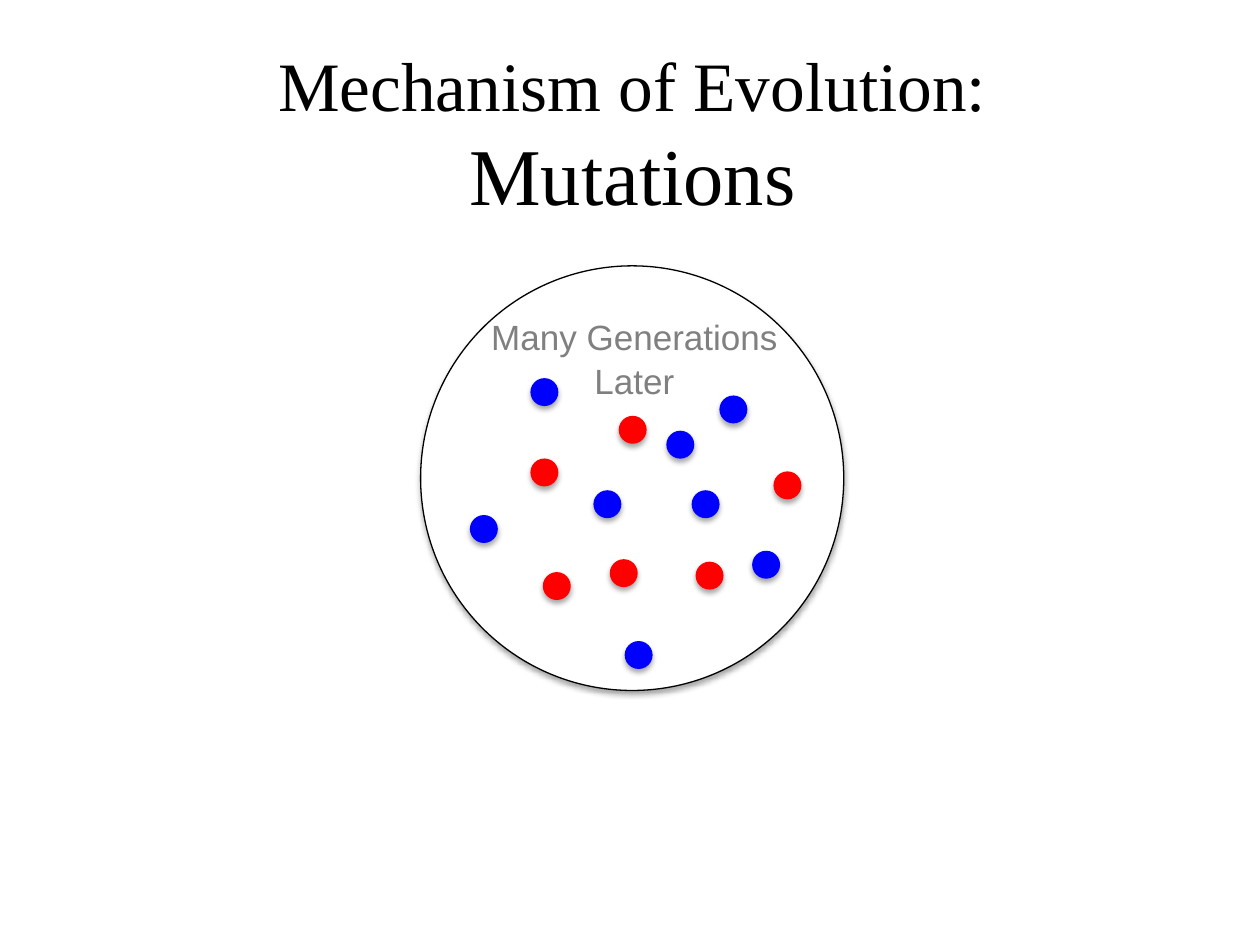
"""Build a slide showing red and blue individuals in a population after many generations."""
import dataclasses

import lxml.etree
import pptx
import pptx.dml.color
import pptx.enum.shapes
import pptx.enum.text
import pptx.oxml.ns
import pptx.util

Cm = pptx.util.Cm
Pt = pptx.util.Pt
COLOURS = {"black": "000000", "white": "FFFFFF", "red": "FF0000", "blue": "0000FF", "grey": "808080"}
DOT_SIZE = 0.51


@dataclasses.dataclass(frozen=True)
class Circle:
    left: float
    top: float
    fill: str
    line: str
    width: float = DOT_SIZE
    height: float = DOT_SIZE
    line_width: float = 1.5
    shadow_distance: float = 2


@dataclasses.dataclass(frozen=True)
class Individual:
    left: float
    top: float
    colour: str


POPULATION = Circle(8.48, 5.36, "white", "black", 8.53, 8.56, 0.75, 1.8)
INDIVIDUALS = [
    Individual(12.5, 8.41, "red"),
    Individual(13.46, 8.71, "blue"),
    Individual(13.97, 9.91, "blue"),
    Individual(10.72, 7.65, "blue"),
    Individual(10.72, 9.27, "red"),
    Individual(11.99, 9.91, "blue"),
    Individual(12.32, 11.3, "red"),
    Individual(14.53, 8, "blue"),
    Individual(14.05, 11.35, "red"),
    Individual(15.19, 11.13, "blue"),
    Individual(15.62, 9.53, "red"),
    Individual(12.62, 12.95, "blue"),
    Individual(10.97, 11.56, "red"),
    Individual(9.5, 10.41, "blue"),
]


def rgb(name: str) -> pptx.dml.color.RGBColor:
    return pptx.dml.color.RGBColor.from_string(COLOURS[name])


def format_run(run, font_name: str, size: float, colour: str) -> None:
    run.font.name = font_name
    run.font.size = Pt(size)
    run.font.color.rgb = rgb(colour)


def add_shadow(shape, distance: float) -> None:
    qn = pptx.oxml.ns.qn
    shape.shadow.inherit = False
    effects = shape.element.spPr.find(qn("a:effectLst"))
    shadow = lxml.etree.SubElement(
        effects, qn("a:outerShdw"), blurRad=str(Pt(3)), dist=str(Pt(distance)),
        dir="5400000", rotWithShape="0")
    colour = lxml.etree.SubElement(shadow, qn("a:srgbClr"), val=COLOURS["black"])
    lxml.etree.SubElement(colour, qn("a:alpha"), val="35000")


def add_circle(slide, circle: Circle) -> None:
    shape = slide.shapes.add_shape(
        pptx.enum.shapes.MSO_SHAPE.OVAL,
        Cm(circle.left), Cm(circle.top), Cm(circle.width), Cm(circle.height))
    shape.fill.solid()
    shape.fill.fore_color.rgb = rgb(circle.fill)
    shape.line.color.rgb = rgb(circle.line)
    shape.line.width = Pt(circle.line_width)
    add_shadow(shape, circle.shadow_distance)


def add_title(slide) -> None:
    title = slide.shapes.title
    title.left, title.top, title.width, title.height = Cm(2.44), Cm(1.07), Cm(20.62), Cm(3.18)
    text_frame = title.text_frame
    text_frame.text = "Mechanism of Evolution: "
    text_frame.word_wrap = True
    text_frame.auto_size = pptx.enum.text.MSO_AUTO_SIZE.NONE
    text_frame.vertical_anchor = pptx.enum.text.MSO_ANCHOR.MIDDLE
    paragraph = text_frame.paragraphs[0]
    paragraph.alignment = pptx.enum.text.PP_ALIGN.CENTER
    paragraph.add_run().text = "Mutations"
    for run, size in zip(paragraph.runs, (39.6, 46)):
        format_run(run, "Times New Roman", size, "black")


def add_label(slide) -> None:
    label = slide.shapes.add_textbox(Cm(9.4), Cm(6.07), Cm(6.78), Cm(1.27))
    text_frame = label.text_frame
    text_frame.text = "Many Generations Later"
    text_frame.word_wrap = True
    text_frame.margin_left = text_frame.margin_right = Cm(0.25)
    text_frame.margin_top = text_frame.margin_bottom = Cm(0.25)
    paragraph = text_frame.paragraphs[0]
    paragraph.alignment = pptx.enum.text.PP_ALIGN.CENTER
    paragraph.line_spacing = 1.05
    format_run(paragraph.runs[0], "Arial", 20, "grey")


def main() -> None:
    presentation = pptx.Presentation()
    presentation.slide_width = Cm(25.4)
    presentation.slide_height = Cm(19.05)
    slide = presentation.slides.add_slide(presentation.slide_layouts.get_by_name("Title Only"))
    add_title(slide)
    add_circle(slide, POPULATION)
    for individual in INDIVIDUALS:
        add_circle(slide, Circle(individual.left, individual.top, individual.colour, individual.colour))
    add_label(slide)
    presentation.save("out.pptx")


if __name__ == "__main__":
    main()
